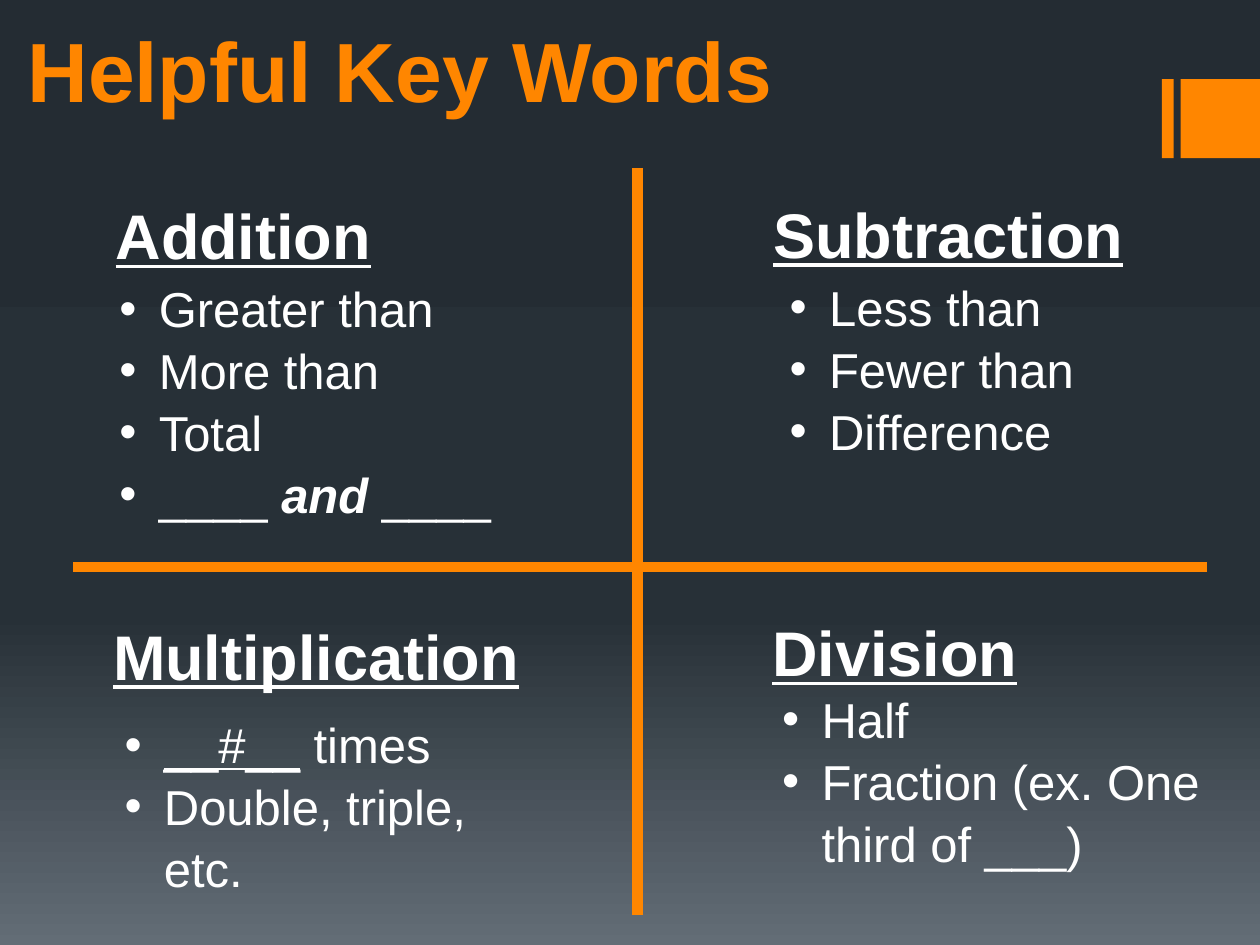
from copy import deepcopy
from dataclasses import dataclass

from pptx import Presentation
from pptx.dml.color import RGBColor
from pptx.enum.shapes import MSO_CONNECTOR, MSO_SHAPE
from pptx.enum.text import MSO_ANCHOR, MSO_AUTO_SIZE
from pptx.oxml.ns import qn
from pptx.util import Pt
from lxml import etree

RECT = MSO_SHAPE.RECTANGLE
LINE = MSO_CONNECTOR.STRAIGHT
TOP, BOTTOM = MSO_ANCHOR.TOP, MSO_ANCHOR.BOTTOM
FIXED = MSO_AUTO_SIZE.NONE


@dataclass(frozen=True)
class Theme:
    font: str = "Arial"
    accent: str = "FF8600"
    text: str = "FFFFFF"
    back: tuple = ((0, "242C33"), (0.65, "273037"), (1, "636D76"))
    title: int = 48
    head: int = 36
    item: int = 28
    rule: int = 6


THEME = Theme()
BOLD = {"bold": True}
UNDER = {"underline": True}
STRONG = {"bold": True, "italic": True}

# Each part: heading, heading box, list items, list box (left, top, width, height).
# An item is a list of (text, format) runs.
PARTS = [
    ("Addition", (55.4, 106.6, 228.2, 66.2),
     [[("Greater than", {})], [("More than", {})], [("Total", {})],
      [("____ ", {}), ("and", STRONG), (" ____", {})]],
     (61.2, 154.1, 239.8, 143.3)),
    ("Subtraction", (431.3, 105.8, 228.2, 66.2),
     [[("Less than", {})], [("Fewer than", {})], [("Difference", {})]],
     (444.2, 153.4, 221.8, 108.7)),
    ("Multiplication", (54, 347, 275.8, 84.2),
     [[("__#__", UNDER), (" times", {})], [("Double, triple, etc.", {})]],
     (64.1, 403.2, 221.8, 108.7)),
    ("Division", (430.6, 344.9, 228.2, 66.2),
     [[("Half", {})], [("Fraction (ex. One third of ___)", {})]],
     (439.9, 388.8, 259.2, 108.7)),
]


def paint(slide):
    """Fill the background with the theme's vertical gradient."""
    fill = slide.background.fill
    fill.gradient()
    fill.gradient_angle = 270
    stops = next(slide.element.iter(qn("a:gsLst")))
    stops.append(deepcopy(stops[-1]))
    for stop, (place, shade) in zip(fill.gradient_stops, THEME.back):
        stop.position = place
        stop.color.rgb = RGBColor.from_string(shade)


def add_bar(slide, box):
    bar = slide.shapes.add_shape(RECT, *map(Pt, box))
    bar.shadow.inherit = False
    bar.fill.solid()
    bar.fill.fore_color.rgb = RGBColor.from_string(THEME.accent)
    bar.line.fill.background()


def add_rule(slide, *ends):
    rule = slide.shapes.add_connector(LINE, *map(Pt, ends))
    rule.line.width = Pt(THEME.rule)
    rule.line.color.rgb = RGBColor.from_string(THEME.accent)
    etree.SubElement(rule.element.spPr, qn("a:effectLst"))


def add_frame(slide, box, anchor=TOP):
    frame = slide.shapes.add_textbox(*map(Pt, box)).text_frame
    look = {"word_wrap": True, "auto_size": FIXED, "vertical_anchor": anchor}
    for name, value in look.items():
        setattr(frame, name, value)
    return frame


def add_run(para, text, size, color, style):
    run = para.add_run()
    run.text = text
    run.font.color.rgb = RGBColor.from_string(color)
    look = {"name": THEME.font, "size": Pt(size), **style}
    for name, value in look.items():
        setattr(run.font, name, value)


def indent(para, left, first=0):
    props = para._p.get_or_add_pPr()
    props.set("marL", str(Pt(left)))
    props.set("indent", str(Pt(first)))
    return props


def add_title(slide, text, box):
    para = add_frame(slide, box, BOTTOM).paragraphs[0]
    add_run(para, text, THEME.title, THEME.accent, BOLD)


def add_head(slide, text, box):
    para = add_frame(slide, box).paragraphs[0]
    indent(para, 3.6)
    para.line_spacing = 1.05
    para.space_before = Pt(1.5)
    add_run(para, text, THEME.head, THEME.text, {**BOLD, **UNDER})


def add_list(slide, items, box):
    frame = add_frame(slide, box)
    for i, runs in enumerate(items):
        para = frame.add_paragraph() if i else frame.paragraphs[0]
        para.line_spacing = 1.05
        props = indent(para, 22.5, -22.5)
        etree.SubElement(props, qn("a:buFont")).set("typeface", THEME.font)
        etree.SubElement(props, qn("a:buChar")).set("char", "•")
        for text, style in runs:
            add_run(para, text, THEME.item, THEME.text, style)


def main():
    deck = Presentation()
    deck.slide_width, deck.slide_height = Pt(720), Pt(540)
    slide = deck.slides.add_slide(deck.slide_layouts[6])
    paint(slide)
    for left, width in ((664, 6.7), (674.7, 45.3)):
        add_bar(slide, (left, 45.2, width, 45.2))
    add_title(slide, "Helpful Key Words", (8.6, 0, 576, 72))
    for head, spot, items, box in PARTS:
        add_head(slide, head, spot)
        add_list(slide, items, box)
    add_rule(slide, 364.3, 96, 364.3, 522.7)
    add_rule(slide, 689.8, 324, 41.8, 324)
    deck.save("out.pptx")


if __name__ == "__main__":
    main()
